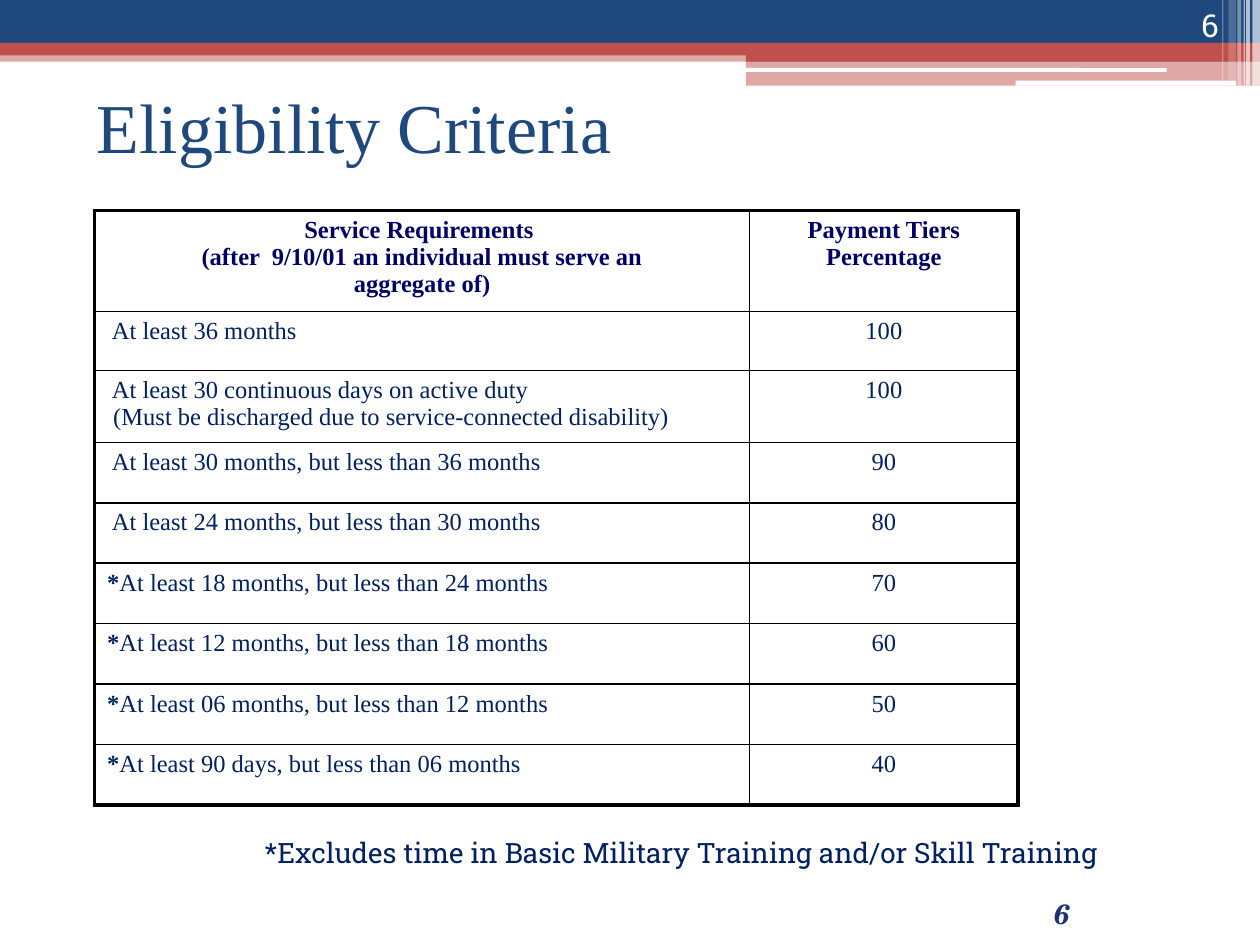
from pptx import Presentation
from pptx.dml.color import RGBColor
from pptx.enum.shapes import MSO_SHAPE as Shape
from pptx.enum.text import MSO_ANCHOR as Anchor, PP_ALIGN as Align
from pptx.oxml.ns import qn
from pptx.util import Inches, Pt
from lxml.etree import SubElement

BLUE = RGBColor(0x1F, 0x49, 0x7D)
RED = RGBColor(0xC0, 0x50, 0x4D)
WHITE = RGBColor(0xFF, 0xFF, 0xFF)
BLACK = RGBColor(0, 0, 0)
NAVY = RGBColor(0x00, 0x20, 0x60)
HEADER = RGBColor(0x00, 0x00, 0x66)
INDIGO = RGBColor(0x1D, 0x32, 0x75)

SERIF, SLAB, SCHOLA = "Times New Roman", "Roboto Slab", "TeX Gyre Schola"
COLS, ROWS = 10, 7.5
THIN, THICK = 1, 2.25


class Deck:
    def __init__(self):
        self.prs = Presentation()
        self.prs.slide_width, self.prs.slide_height = Inches(10), Inches(7.5)
        self.s = self.prs.slides.add_slide(self.prs.slide_layouts[6])

    def box(self, x, y, w, h):
        cw, rh = self.prs.slide_width / COLS, self.prs.slide_height / ROWS
        return [int(v) for v in (x * cw, y * rh, w * cw, h * rh)]

    def bar(self, x, y, w, h, color, alpha=100, kind=Shape.RECTANGLE):
        sp = self.s.shapes.add_shape(kind, *self.box(x, y, w, h))
        sp.shadow.inherit = False
        sp.line.fill.background()
        sp.fill.solid()
        sp.fill.fore_color.rgb = color
        if alpha < 100:
            clr = sp._element.spPr.find(qn("a:solidFill"))[0]
            SubElement(clr, qn("a:alpha"), val=str(alpha * 1000))

    def add_runs(self, tf, paragraphs, size, font, color, align=Align.LEFT, bold=False, italic=False):
        for i, runs in enumerate(paragraphs):
            p = tf.add_paragraph() if i else tf.paragraphs[0]
            p.alignment = align
            for text in runs:
                r = p.add_run()
                r.text = text
                r.font.size, r.font.name = Pt(size), font
                r.font.bold, r.font.italic = bold or text == "*", italic
                r.font.color.rgb = color

    def text(self, x, y, w, h, text, size, font, color, anchor=Anchor.MIDDLE, wrap=True, **style):
        tf = self.s.shapes.add_textbox(*self.box(x, y, w, h)).text_frame
        tf.word_wrap, tf.vertical_anchor = wrap, anchor
        self.add_runs(tf, [[text]], size, font, color, **style)

    def borders(self, cell, **widths):
        tcPr = cell._tc.get_or_add_tcPr()
        for i, side in enumerate("LRTB"):
            ln = SubElement(tcPr, qn("a:ln" + side), w=str(int(Pt(widths[side]))))
            fill = SubElement(ln, qn("a:solidFill"))
            SubElement(fill, qn("a:srgbClr"), val=str(BLACK))
            tcPr.insert(i, ln)

    def table(self, x, y, widths, heights, rows):
        frame = self.s.shapes.add_table(
            len(rows), len(widths), *self.box(x, y, sum(widths), sum(heights)))
        t = frame.table
        t.first_row = t.horz_banding = False
        for col, w in zip(t.columns, widths):
            col.width = self.box(0, 0, w, 0)[2]
        for row, h in zip(t.rows, heights):
            row.height = self.box(0, 0, 0, h)[3]
        last_row, last_col = len(rows) - 1, len(widths) - 1
        for i, row in enumerate(rows):
            for j, paragraphs in enumerate(row):
                cell = t.cell(i, j)
                cell.fill.background()
                self.borders(cell,
                             L=THIN if j else THICK,
                             R=THICK if j == last_col else THIN,
                             T=THIN if i else THICK,
                             B=THICK if i == last_row else THIN)
                self.add_runs(cell.text_frame, paragraphs, 14, SERIF,
                              NAVY if i else HEADER,
                              align=Align.LEFT if i and not j else Align.CENTER,
                              bold=i == 0)


def main():
    d = Deck()
    for band in [
        (0, 0.4, 10, 0.09, RED, 50),
        (0, 0, 10, 0.34, BLUE),
        (0, 0.34, 10, 0.1, RED),
        (5.92, 0.39, 4.08, 0.1, RED),
        (5.92, 0.48, 4.08, 0.2, RED, 50),
        (5.91, 0.54, 3.35, 0.03, WHITE, 100, Shape.ROUNDED_RECTANGLE),
        (8.06, 0.64, 1.75, 0.04, WHITE, 100, Shape.ROUNDED_RECTANGLE),
    ]:
        d.bar(*band)
    for x, w, h, alpha in [
        (9.94, 0.06, 0.68, 65),
        (9.89, 0.03, 0.68, 65),
        (9.87, 0.01, 0.68, 60),
        (9.82, 0.03, 0.68, 40),
        (9.75, 0.06, 0.64, 20),
        (9.7, 0.01, 0.64, 30),
    ]:
        d.bar(x, 0, w, h, WHITE, alpha)

    d.text(0.67, 0.5, 7.08, 1, "Eligibility Criteria", 40, SERIF, BLUE)
    d.text(8.94, 0, 0.83, 0.4, "6", 18, SLAB, WHITE, anchor=Anchor.BOTTOM, align=Align.RIGHT)
    d.text(7.42, 7, 2.08, 0.5, "6 ", 16, SCHOLA, INDIGO,
           align=Align.CENTER, bold=True, italic=True)
    d.text(2, 6.58, 7.05, 0.37,
           "*Excludes time in Basic Military Training and/or Skill Training",
           16, SLAB, NAVY, anchor=Anchor.TOP, wrap=False)

    header = [
        [["Service Requirements "],
         ["(after  9/10/01 an individual must serve an"],
         ["aggregate of)"]],
        [["Payment Tiers Percentage"]],
    ]
    tiers = [
        ([[" At least 36 months"]], 100),
        ([[" At least 30 continuous days on active duty"],
          [" (Must be discharged due to service-connected disability)"]], 100),
        ([[" At least 30 months, but less than 36 months"]], 90),
        ([[" At least 24 months, but less than 30 months"]], 80),
        ([["*", "At least 18 months, but less than 24 months"]], 70),
        ([["*", "At least 12 months, but less than 18 months"]], 60),
        ([["*", "At least 06 months, but less than 12 months"]], 50),
        ([["*", "At least 90 days, but less than 06 months"]], 40),
    ]
    rows = [header] + [[service, [[str(percent)]]] for service, percent in tiers]
    d.table(0.75, 1.67, [5.2, 2.13], [0.8, 0.47, 0.57] + [0.48] * 6, rows)
    d.prs.save("out.pptx")


if __name__ == "__main__":
    main()
